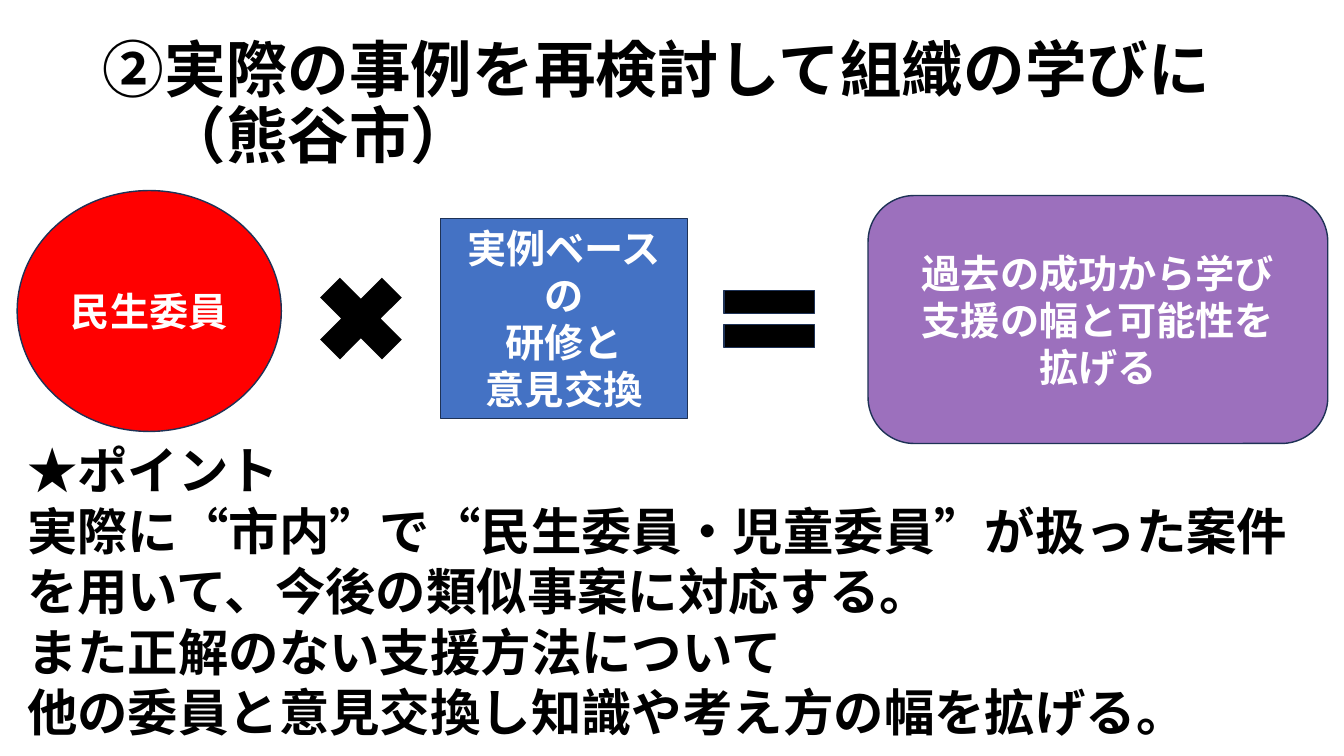
import pptx
import pptx.util
import pptx.dml.color
import pptx.enum.shapes
import pptx.enum.text
import pptx.oxml
import pptx.oxml.ns

Inches = pptx.util.Inches
Pt = pptx.util.Pt
SHAPE = pptx.enum.shapes.MSO_SHAPE
ALIGN = pptx.enum.text.PP_ALIGN
ANCHOR = pptx.enum.text.MSO_ANCHOR
FONT = "Noto Sans CJK JP"


def color(value):
    return pptx.dml.color.RGBColor.from_string(value)


def write(tf, text, size, fill, align, anchor, spacing=1.0):
    tf.word_wrap = True
    tf.vertical_anchor = anchor
    tf.text = text
    for p in tf.paragraphs:
        p.alignment = align
        p.line_spacing = spacing
        for r in p.runs:
            r.font.size = Pt(size)
            r.font.bold = True
            r.font.name = FONT
            r.font.color.rgb = color(fill)
            ea = pptx.oxml.parse_xml(f'<a:ea {pptx.oxml.ns.nsdecls("a")} typeface="{FONT}"/>')
            r._r.get_or_add_rPr().append(ea)


prs = pptx.Presentation()
prs.slide_width = Inches(13.33)
prs.slide_height = Inches(7.5)
s = prs.slides.add_slide(prs.slide_layouts[5])

title = s.shapes.title
title.left, title.top = Inches(0.92), Inches(0.32)
title.width, title.height = Inches(11.5), Inches(1.45)
write(title.text_frame, "②実際の事例を再検討して組織の学びに\v　（熊谷市）", 44, "000000",
      ALIGN.LEFT, ANCHOR.MIDDLE, 0.9)

equation = [
    (SHAPE.OVAL, 0.17, 1.89, 2.62, 2.39, "FF0000", "民生委員"),
    (SHAPE.MATH_MULTIPLY, 2.99, 2.57, 1.18, 1.18, "000000", ""),
    (SHAPE.RECTANGLE, 4.37, 2.17, 2.45, 1.98, "4472C4", "実例ベースの\n研修と\n意見交換"),
    (SHAPE.MATH_EQUAL, 7.02, 2.68, 1.22, 0.97, "000000", ""),
    (SHAPE.ROUNDED_RECTANGLE, 8.61, 1.94, 4.56, 2.46, "7030A0",
     "過去の成功から学び\n支援の幅と可能性を\n拡げる"),
]
for kind, left, top, width, height, fill, text in equation:
    sp = s.shapes.add_shape(kind, Inches(left), Inches(top), Inches(width), Inches(height))
    sp.shadow.inherit = False
    sp.fill.solid()
    sp.fill.fore_color.rgb = color(fill)
    if kind == SHAPE.MATH_MULTIPLY:
        sp.line.fill.background()
    else:
        sp.line.color.rgb = color("1E3256")
        sp.line.width = Pt(1)
    if kind == SHAPE.ROUNDED_RECTANGLE:
        sp.adjustments[0] = 0.186
        rgb = sp.fill._xPr.find(".//" + pptx.oxml.ns.qn("a:srgbClr"))
        rgb.append(pptx.oxml.parse_xml(f'<a:alpha {pptx.oxml.ns.nsdecls("a")} val="69000"/>'))
    if text:
        write(sp.text_frame, text, 28, "FFFFFF", ALIGN.CENTER, ANCHOR.MIDDLE)

points = s.shapes.add_textbox(Inches(0.17), Inches(4.31), Inches(13), Inches(3.74))
write(points.text_frame,
      "★ポイント\n"
      "実際に“市内”で“民生委員・児童委員”が扱った案件を用いて、今後の類似事案に対応する。\n"
      "また正解のない支援方法について\n"
      "他の委員と意見交換し知識や考え方の幅を拡げる。",
      36, "000000", ALIGN.LEFT, ANCHOR.TOP)
points.text_frame.auto_size = pptx.enum.text.MSO_AUTO_SIZE.SHAPE_TO_FIT_TEXT

prs.save("out.pptx")
